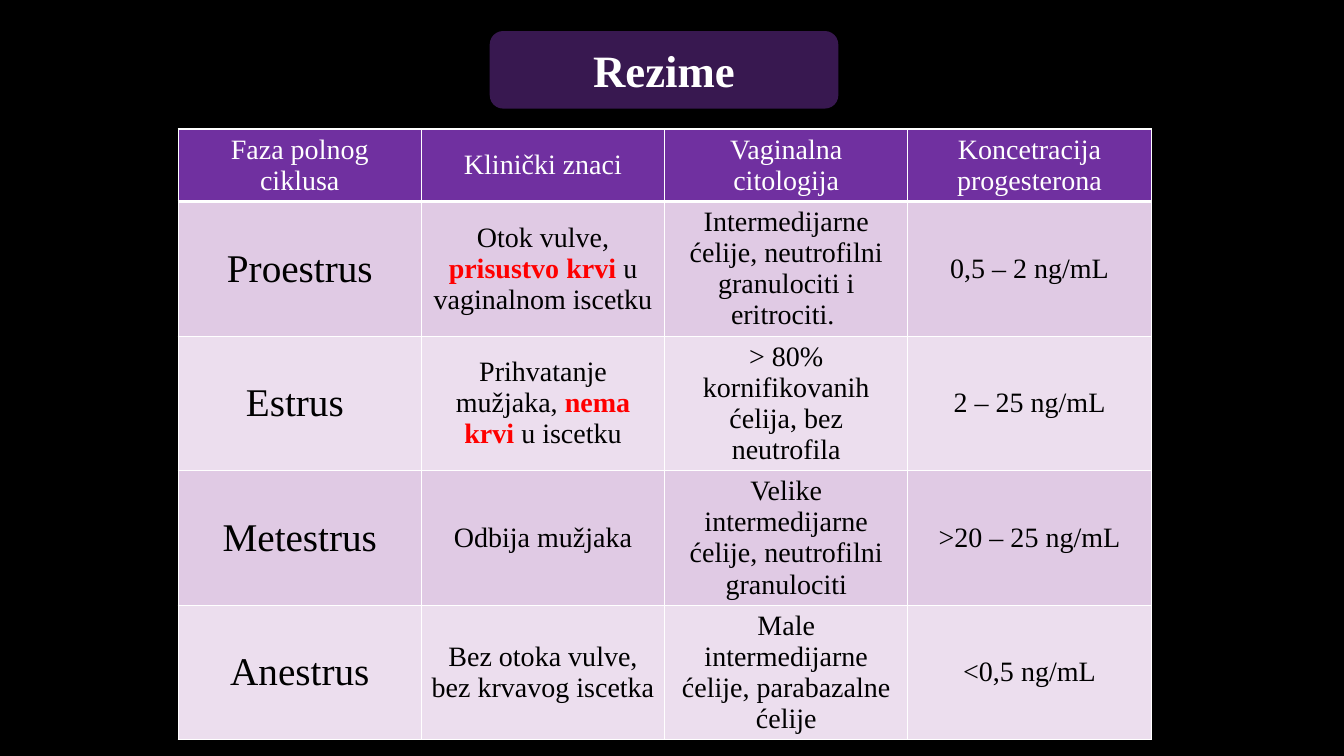
from lxml import etree
from pptx import Presentation
from pptx.dml.color import RGBColor
from pptx.enum import shapes, text
from pptx.oxml import ns
from pptx.util import Cm, Pt

FONT = "Times New Roman"
BLACK, WHITE, RED = "000000", "FFFFFF", "FF0000"
PLUM, PURPLE = "381850", "7030A0"
BANDS = ["E0CAE4", "ECDEEE"]

HEADING = "Rezime"
COLUMNS = ["Faza polnog ciklusa", "Klinički znaci", "Vaginalna citologija", "Koncetracija progesterona"]
PHASES = [
    ("Proestrus",
     [("Otok vulve, ", False), ("prisustvo krvi ", True), ("u vaginalnom iscetku", False)],
     "Intermedijarne ćelije, neutrofilni granulociti i eritrociti. ",
     "0,5 – 2 ng/mL"),
    ("Estrus ",
     [("Prihvatanje mužjaka, ", False), ("nema krvi ", True), ("u iscetku", False)],
     "> 80% kornifikovanih ćelija, bez neutrofila",
     "2 – 25 ng/mL"),
    ("Metestrus",
     [("Odbija mužjaka", False)],
     "Velike intermedijarne ćelije, neutrofilni granulociti",
     ">20 – 25 ng/mL"),
    ("Anestrus",
     [("Bez otoka vulve, bez krvavog iscetka", False)],
     "Male intermedijarne ćelije, parabazalne ćelije",
     "<0,5 ng/mL"),
]

HEADING_BOX = Cm(12.36), Cm(0.8), Cm(8.75), Cm(1.92)
TABLE_LEFT, TABLE_TOP = Cm(4.49), Cm(3.25)
COLUMN_WIDTH = Cm(6.13)
HEADER_HEIGHT, PHASE_HEIGHT = Cm(1.83), Cm(3.39)


def paint(target, color):
    target.solid()
    target.fore_color.rgb = RGBColor.from_string(color)


def write(paragraph, words, size, color, bold=False):
    paragraph.alignment = text.PP_ALIGN.CENTER
    run = paragraph.add_run()
    run.text = words
    run.font.name, run.font.size, run.font.bold = FONT, Pt(size), bold
    run.font.color.rgb = RGBColor.from_string(color)


def border(cell, side, width):
    edge = etree.SubElement(cell._tc.get_or_add_tcPr(), ns.qn(f"a:ln{side}"), w=str(Pt(width)))
    fill = etree.SubElement(edge, ns.qn("a:solidFill"))
    etree.SubElement(fill, ns.qn("a:srgbClr"), val=WHITE)


def fill_cell(cell, runs, size, color, background, bottom=1):
    for side, width in (("L", 1), ("R", 1), ("T", 1), ("B", bottom)):
        border(cell, side, width)
    paint(cell.fill, background)
    cell.vertical_anchor = text.MSO_ANCHOR.MIDDLE
    for words, stressed in runs:
        write(cell.text_frame.paragraphs[0], words, size, RED if stressed else color, stressed)


def add_heading(slide):
    plate = slide.shapes.add_shape(shapes.MSO_SHAPE.ROUNDED_RECTANGLE, *HEADING_BOX)
    plate.shadow.inherit = False
    paint(plate.fill, PLUM)
    paint(plate.line.fill, PLUM)
    plate.line.width = Pt(1)
    heading = slide.shapes.title
    heading.element.addprevious(plate.element)
    heading.left, heading.top, heading.width, heading.height = HEADING_BOX
    heading.text_frame.auto_size = text.MSO_AUTO_SIZE.NONE
    heading.text_frame.vertical_anchor = text.MSO_ANCHOR.MIDDLE
    write(heading.text_frame.paragraphs[0], HEADING, 32, WHITE, True)


def add_summary(slide):
    summary = slide.shapes.add_table(
        len(PHASES) + 1, len(COLUMNS), TABLE_LEFT, TABLE_TOP,
        COLUMN_WIDTH * len(COLUMNS), HEADER_HEIGHT + PHASE_HEIGHT * len(PHASES)).table
    for column in summary.columns:
        column.width = COLUMN_WIDTH
    for index, row in enumerate(summary.rows):
        row.height = PHASE_HEIGHT if index else HEADER_HEIGHT
    for col, label in enumerate(COLUMNS):
        fill_cell(summary.cell(0, col), [(label, False)], 20, WHITE, PURPLE, bottom=3)
    for index, (phase, signs, cytology, progesterone) in enumerate(PHASES):
        entries = [[(phase, False)], signs, [(cytology, False)], [(progesterone, False)]]
        for col, runs in enumerate(entries):
            fill_cell(summary.cell(index + 1, col), runs, 20 if col else 28, BLACK, BANDS[index % 2])


def main():
    deck = Presentation()
    deck.slide_width, deck.slide_height = Cm(33.87), Cm(19.05)
    slide = deck.slides.add_slide(deck.slide_layouts[5])
    paint(slide.background.fill, BLACK)
    add_heading(slide)
    add_summary(slide)
    deck.save("out.pptx")


if __name__ == "__main__":
    main()
